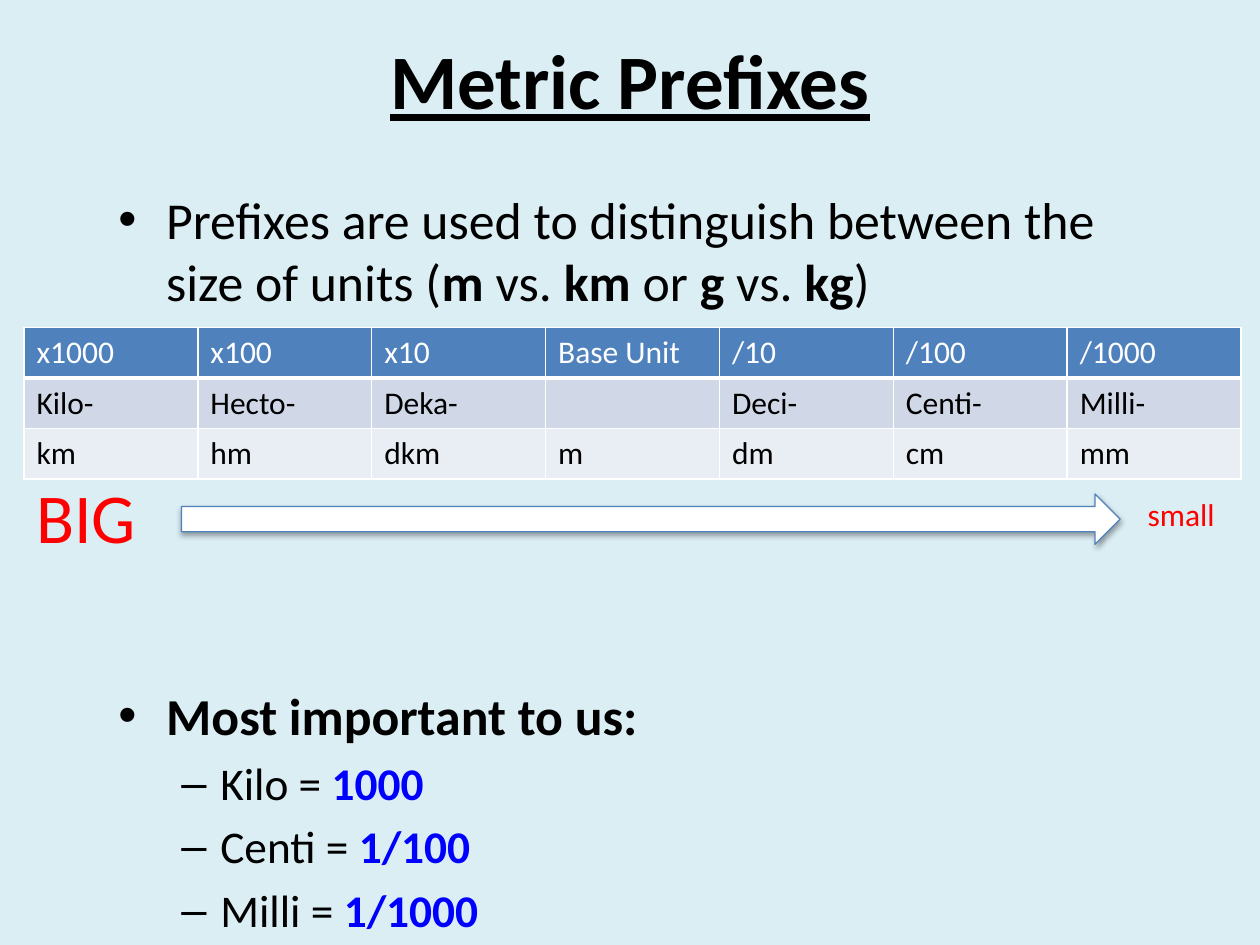
from dataclasses import dataclass

from lxml.etree import SubElement
from pptx import Presentation
from pptx.dml.color import RGBColor
from pptx.enum.shapes import MSO_SHAPE as Shape
from pptx.enum.text import MSO_ANCHOR as Anchor, PP_ALIGN as Align
from pptx.oxml.ns import qn
from pptx.util import Inches, Pt


@dataclass(frozen=True)
class Theme:
    font: str = "Calibri"
    background: str = "DBEEF4"
    ink: str = "000000"
    paper: str = "FFFFFF"
    accent: str = "4F81BD"
    value: str = "0000FF"
    scale: str = "FF0000"
    bands: tuple = ("4F81BD", "D0D8E8", "E9EDF4")
    title_size: float = 44
    body_size: float = 29.6
    sub_size: float = 25.9
    small_size: float = 18
    big_size: float = 40


def rgb(code):
    return RGBColor.from_string(code)


def add_xml(parent, tag, **attributes):
    return SubElement(parent, qn(tag), attributes)


class SlideBuilder:
    def __init__(self, slide, theme):
        self.slide, self.theme = slide, theme
        fill = slide.background.fill
        fill.solid()
        fill.fore_color.rgb = rgb(theme.background)

    def run(self, paragraph, text, size, color=None, **formats):
        run = paragraph.add_run()
        run.text = text
        values = {"name": self.theme.font, "size": Pt(size), **formats}
        for key, value in values.items():
            setattr(run.font, key, value)
        run.font.color.rgb = rgb(color or self.theme.ink)

    def frame(self, box, **formats):
        textbox = self.slide.shapes.add_textbox(*map(Inches, box))
        for key, value in {"word_wrap": True, **formats}.items():
            setattr(textbox.text_frame, key, value)
        return textbox

    def label(self, box, text, size, color=None, align=Align.LEFT,
              frame_formats=None, **formats):
        textbox = self.frame(box, **(frame_formats or {}))
        paragraph = textbox.text_frame.paragraphs[0]
        paragraph.alignment = align
        self.run(paragraph, text, size, color, **formats)
        return textbox

    def bullets(self, box, items):
        """Each item: level, points before, runs of (text, format dict)."""
        text_frame = self.frame(box).text_frame
        styles = (("•", 0.38, 0.38, self.theme.body_size),
                  ("–", 0.81, 0.31, self.theme.sub_size))
        for index, (level, before, runs) in enumerate(items):
            paragraph = (text_frame.add_paragraph() if index
                         else text_frame.paragraphs[0])
            mark, margin, hang, size = styles[level]
            paragraph.level = level
            paragraph.space_before = Pt(before)
            properties = paragraph._p.get_or_add_pPr()
            properties.set("marL", str(Inches(margin)))
            properties.set("indent", str(-Inches(hang)))
            add_xml(properties, "a:buFont", typeface="Arial")
            add_xml(properties, "a:buChar", char=mark)
            for text, formats in runs:
                self.run(paragraph, text, size, **formats)

    def border(self, cell, side, width):
        line = add_xml(cell._tc.get_or_add_tcPr(), f"a:ln{side}",
                       w=str(Pt(width)))
        fill = add_xml(line, "a:solidFill")
        add_xml(fill, "a:srgbClr", val=self.theme.paper)

    def table(self, left, top, column_width, row_height, rows):
        columns = len(rows[0])
        table = self.slide.shapes.add_table(
            len(rows), columns, Inches(left), Inches(top),
            Inches(column_width * columns),
            Inches(row_height * len(rows))).table
        for column in table.columns:
            column.width = Inches(column_width)
        for r, texts in enumerate(rows):
            table.rows[r].height = Inches(row_height)
            color = self.theme.ink if r else self.theme.paper
            for c, text in enumerate(texts):
                cell = table.cell(r, c)
                for side in "LRTB":
                    self.border(cell, side, 3 if r == 0 and side == "B" else 1)
                cell.fill.solid()
                cell.fill.fore_color.rgb = rgb(self.theme.bands[r])
                self.run(cell.text_frame.paragraphs[0], text,
                         self.theme.small_size, color, bold=False)

    def arrow(self, box):
        arrow = self.slide.shapes.add_shape(Shape.RIGHT_ARROW,
                                            *map(Inches, box))
        arrow.fill.solid()
        arrow.fill.fore_color.rgb = rgb(self.theme.paper)
        arrow.line.color.rgb = rgb(self.theme.accent)
        arrow.line.width = Pt(0.75)
        # Soft shadow straight below
        arrow.shadow.inherit = False
        effects = arrow._element.spPr.find(qn("a:effectLst"))
        shadow = add_xml(effects, "a:outerShdw", blurRad=str(Pt(3.1)),
                         dist=str(Pt(1.8)), dir="5400000", rotWithShape="0")
        color = add_xml(shadow, "a:srgbClr", val=self.theme.ink)
        add_xml(color, "a:alpha", val="35000")
        return arrow


def main():
    theme = Theme()
    deck = Presentation()
    deck.slide_width, deck.slide_height = Inches(10), Inches(7.5)
    builder = SlideBuilder(deck.slides.add_slide(deck.slide_layouts[6]), theme)

    # Title
    builder.label((0.5, 0, 9, 1.25), "Metric Prefixes", theme.title_size,
                  align=Align.CENTER,
                  frame_formats={"vertical_anchor": Anchor.MIDDLE},
                  bold=True, underline=True)

    # Explanation above the table and key prefixes below it
    plain, strong = {}, {"bold": True}
    value = {"bold": True, "color": theme.value}
    key_prefixes = (("Kilo", "1000"), ("Centi", "1/100"), ("Milli", "1/1000"))
    builder.bullets((0.84, 1.44, 8.32, 5.59), [
        (0, 0, [("Prefixes are used to distinguish between the "
                 "size of units (", plain),
                ("m", strong), (" vs. ", plain), ("km", strong),
                (" or ", plain), ("g", strong), (" vs. ", plain),
                ("kg", strong), (")", plain)]),
        (0, 212.5, [("Most important to us:", strong)]),
        *((1, 5.2, [(f"{prefix} = ", plain), (factor, value)])
          for prefix, factor in key_prefixes),
    ])

    # Prefix table
    builder.table(0.19, 2.6, 1.38, 0.4, [
        ("x1000", "x100", "x10", "Base Unit", "/10", "/100", "/1000"),
        ("Kilo-", "Hecto-", "Deka-", "", "Deci-", "Centi-", "Milli-"),
        ("km", "hm", "dkm", "m", "dm", "cm", "mm"),
    ])

    # Scale from big to small
    big = builder.label((0.19, 3.71, 1.51, 0.77), "BIG", theme.big_size,
                        theme.scale)
    small = builder.label((9.01, 3.88, 0.74, 0.4), "small", theme.small_size,
                          theme.scale, frame_formats={"word_wrap": False})
    arrow = builder.arrow((1.44, 3.92, 7.45, 0.4))
    builder.slide.shapes.add_group_shape([big, small, arrow])

    deck.save("out.pptx")


if __name__ == "__main__":
    main()
